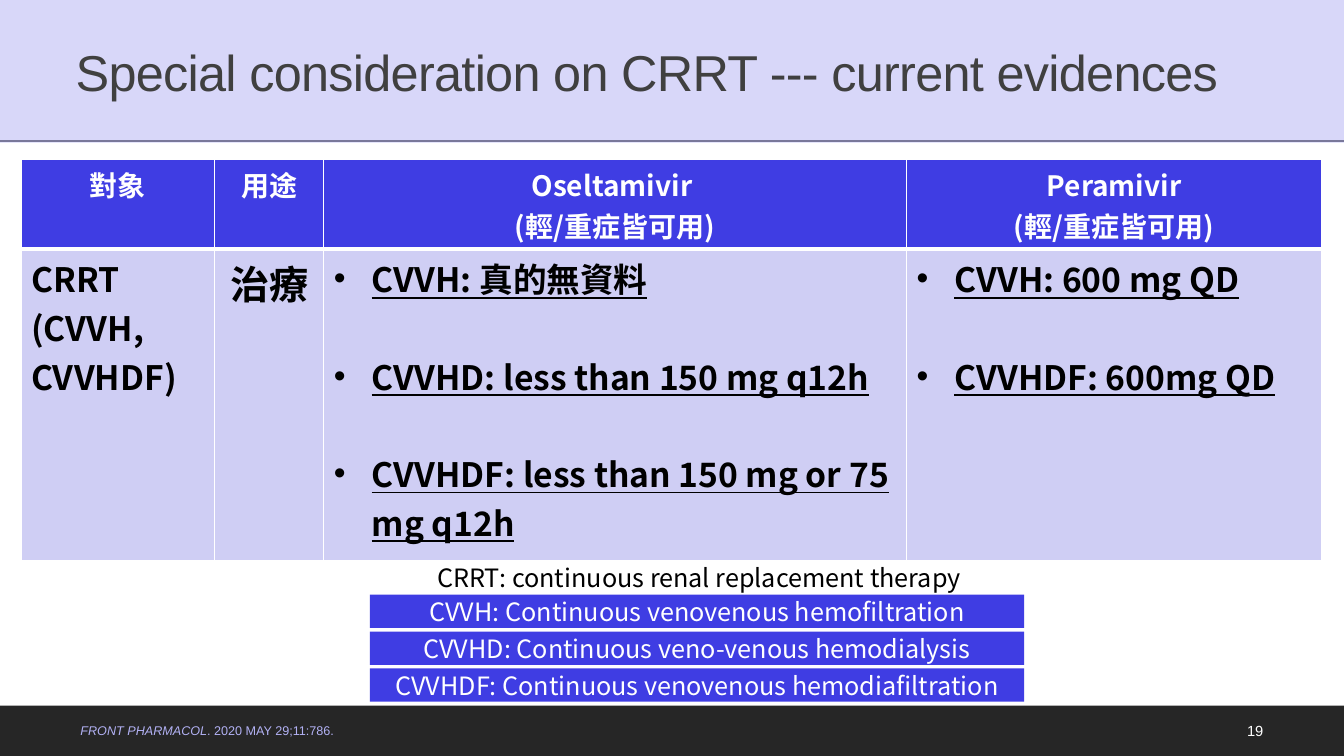
from lxml import etree
from pptx import Presentation
from pptx.dml.color import RGBColor
from pptx.enum.shapes import MSO_CONNECTOR, MSO_SHAPE
from pptx.enum.text import MSO_ANCHOR, PP_ALIGN
from pptx.oxml.ns import qn
from pptx.util import Pt

RECT = MSO_SHAPE.RECTANGLE
LINE = MSO_CONNECTOR.STRAIGHT
MID, TOP = MSO_ANCHOR.MIDDLE, MSO_ANCHOR.TOP
LEFT, MID_X, RIGHT = PP_ALIGN.LEFT, PP_ALIGN.CENTER, PP_ALIGN.RIGHT

WIDE, HIGH = 960, 540
BLUE, PALE, LILAC = "3F3DE3", "CFCEF4", "B2B1F4"
WHITE, BLACK, GREY, DARK = "FFFFFF", "000000", "404040", "262626"
SANS, NOTO = "Arial", "Noto Sans CJK TC"

HEAD = {"name": NOTO, "size": Pt(20), "bold": True, "color": WHITE}
BODY = {**HEAD, "size": Pt(24), "color": BLACK}
USE = {**BODY, "size": Pt(28)}
DOSE = {**BODY, "underline": True}
TERM = {"name": NOTO, "size": Pt(18), "color": WHITE}
NOTE = {**TERM, "color": BLACK}
TITLE = {"name": SANS, "size": Pt(36), "color": GREY}
CITE = {"name": SANS, "size": Pt(9), "color": LILAC}
PAGE = {"name": SANS, "size": Pt(10.5), "color": WHITE}

COLS = [138.4, 77.8, 416.2, 296.7]
ROWS = [64, 222.4]
HEADS = [
    ["對象"],
    ["用途"],
    ["Oseltamivir ", "(輕/重症皆可用)"],
    ["Peramivir", "(輕/重症皆可用)"],
]
CELLS = [
    (["CRRT", "(CVVH, CVVHDF)"], BODY, LEFT, False),
    (["治療"], USE, MID_X, False),
    (["CVVH: 真的無資料", "CVVHD: less than 150 mg q12h",
      "CVVHDF: less than 150 mg or 75 mg q12h"], DOSE, LEFT, True),
    (["CVVH: 600 mg QD", "CVVHDF: 600mg QD"], DOSE, LEFT, True),
]
TERMS = [
    "CVVH: Continuous venovenous hemofiltration",
    "CVVHD: Continuous veno-venous hemodialysis",
    "CVVHDF: Continuous venovenous hemodiafiltration",
]


def paint(value):
    """Turn a hex string into a colour."""
    return RGBColor.from_string(value)


def add_run(para, text, form):
    """Add a run and set its font from a dict of format values."""
    run = para.add_run()
    run.text = text
    for key, value in form.items():
        if key == "color":
            run.font.color.rgb = paint(value)
        else:
            setattr(run.font, key, value)
    if form["name"] == NOTO:
        east = etree.SubElement(run.font._element, qn("a:ea"))
        east.set("typeface", NOTO)


def add_dot(para):
    """Give a paragraph a round bullet with a hanging indent."""
    props = para._p.get_or_add_pPr()
    props.set("marL", str(Pt(27)))
    props.set("indent", str(-Pt(27)))
    etree.SubElement(props, qn("a:buFont")).set("typeface", SANS)
    etree.SubElement(props, qn("a:buChar")).set("char", "•")


def fill_text(frame, lines, form, align=LEFT, dots=False):
    """Write lines as paragraphs, spaced out when bulleted."""
    frame.word_wrap = True
    for index, line in enumerate(lines):
        para = frame.add_paragraph() if index else frame.paragraphs[0]
        para.alignment = align
        if dots:
            add_dot(para)
            if index:
                para.space_before = Pt(34.7)
        add_run(para, line, form)


def add_bar(slide, box, color):
    """Add a plain filled rectangle."""
    bar = slide.shapes.add_shape(RECT, *map(Pt, box))
    bar.shadow.inherit = False
    bar.fill.solid()
    bar.fill.fore_color.rgb = paint(color)
    bar.line.fill.background()
    bar.text_frame.vertical_anchor = MID
    return bar


def add_text(slide, box, lines, form, align=LEFT, anchor=MID):
    """Add a text box and return its text frame."""
    frame = slide.shapes.add_textbox(*map(Pt, box)).text_frame
    frame.vertical_anchor = anchor
    fill_text(frame, lines, form, align)
    return frame


def add_rule(slide, y):
    """Add a thin line across the slide."""
    rule = slide.shapes.add_connector(LINE, 0, Pt(y), Pt(WIDE), Pt(y))
    rule.line.color.rgb = paint(GREY)
    rule.line.width = Pt(1)
    etree.SubElement(rule._element.spPr, qn("a:effectLst"))


def add_title(slide, text):
    """Add the half-clear title band."""
    band = add_bar(slide, (0, 0, WIDE, 102), LILAC)
    color = band.fill._xPr.find(qn("a:solidFill"))[0]
    etree.SubElement(color, qn("a:alpha")).set("val", "50000")
    frame = band.text_frame
    frame.margin_left, frame.margin_top = Pt(54), Pt(8.6)
    fill_text(frame, [text], TITLE)
    para = frame.paragraphs[0]
    para.line_spacing = 0.9
    para.runs[0].font._element.set("spc", "-50")


def style_cell(cell, color, base):
    """Set white borders and the fill of a cell."""
    props = cell._tc.get_or_add_tcPr()
    for side, width in zip("LRTB", (1, 1, 1, base)):
        edge = etree.SubElement(props, qn("a:ln" + side), w=str(Pt(width)))
        fill = etree.SubElement(edge, qn("a:solidFill"))
        etree.SubElement(fill, qn("a:srgbClr")).set("val", WHITE)
    cell.fill.solid()
    cell.fill.fore_color.rgb = paint(color)


def add_doses(slide):
    """Add the table of doses."""
    box = (15.1, 113.8, sum(COLS), sum(ROWS))
    table = slide.shapes.add_table(2, len(COLS), *map(Pt, box)).table
    for row, height in zip(table.rows, ROWS):
        row.height = Pt(height)
    for index, width in enumerate(COLS):
        table.columns[index].width = Pt(width)
        head, body = table.cell(0, index), table.cell(1, index)
        style_cell(head, BLUE, 3)
        style_cell(body, PALE, 1)
        fill_text(head.text_frame, HEADS[index], HEAD, MID_X)
        fill_text(body.text_frame, *CELLS[index])


def main():
    """Build the slide and save it."""
    deck = Presentation()
    deck.slide_width, deck.slide_height = Pt(WIDE), Pt(HIGH)
    slide = deck.slides.add_slide(deck.slide_layouts[6])
    add_bar(slide, (0, 504, WIDE, 36), DARK)
    add_rule(slide, 100.8)
    cite = add_text(slide, (50.4, 507.6, 537, 28.8), ["FRONT PHARMACOL"],
                    {**CITE, "italic": True})
    add_run(cite.paragraphs[0], ". 2020 MAY 29;11:786.", CITE)
    add_text(slide, (860.4, 507.6, 49, 28.8), ["19"], PAGE, RIGHT)
    add_title(slide, "Special consideration on CRRT --- current evidences")
    add_doses(slide)
    for index, term in enumerate(TERMS):
        bar = add_bar(slide, (264.2, 424.8 + 26.3 * index, 467.3, 23.8), BLUE)
        fill_text(bar.text_frame, [term], TERM, MID_X)
    add_text(slide, (305.3, 398.2, 398.2, 28.8),
             ["CRRT: continuous renal replacement therapy"], NOTE, anchor=TOP)
    deck.save("out.pptx")


if __name__ == "__main__":
    main()
